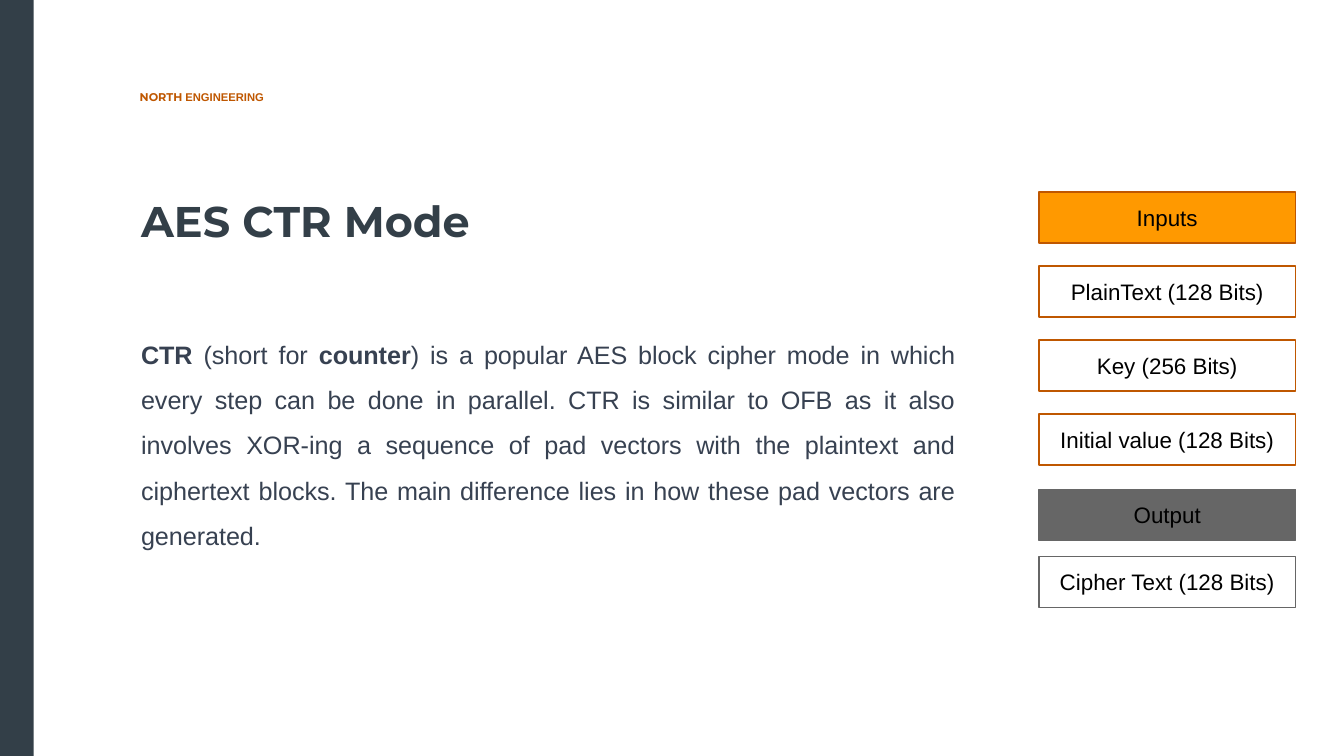
from dataclasses import dataclass

from pptx import Presentation
from pptx.dml.color import RGBColor
from pptx.enum import shapes, text
from pptx.util import Inches, Pt

SLATE = RGBColor(0x33, 0x3F, 0x48)
INK = RGBColor(0x37, 0x41, 0x51)
BURNT = RGBColor(0xBF, 0x57, 0x00)
ORANGE = RGBColor(0xFF, 0x99, 0x00)
GRAY = RGBColor(0x66, 0x66, 0x66)
WHITE = RGBColor(0xFF, 0xFF, 0xFF)
BLACK = RGBColor(0x00, 0x00, 0x00)

SLIDE_WIDTH = 10
SLIDE_HEIGHT = SLIDE_WIDTH * 9 / 16
BOX_LEFT, BOX_WIDTH, BOX_HEIGHT = 7.73, 1.91, 0.38
INPUT_TOP, INPUT_PITCH = 1.43, 0.55


@dataclass
class Box:
    label: str
    top: float
    fill: RGBColor
    line: RGBColor


@dataclass
class Span:
    text: str
    size: float
    color: RGBColor
    bold: bool = False
    font: str = "Arial"


def set_frame(tf, x: float, y: float, anchor) -> None:
    tf.word_wrap = True
    tf.auto_size = text.MSO_AUTO_SIZE.NONE
    tf.vertical_anchor = anchor
    tf.margin_left = tf.margin_right = Inches(x)
    tf.margin_top = tf.margin_bottom = Inches(y)


def add_spans(p, spans: list[Span]) -> None:
    for span in spans:
        r = p.add_run()
        r.text = span.text
        r.font.name = span.font
        r.font.size = Pt(span.size)
        r.font.bold = span.bold
        r.font.color.rgb = span.color


def fill_text(sp, spans: list[Span], align=text.PP_ALIGN.LEFT):
    set_frame(sp.text_frame, 0.04, 0.02, text.MSO_ANCHOR.TOP)
    p = sp.text_frame.paragraphs[0]
    p.alignment = align
    add_spans(p, spans)
    return p


def add_text(s, left: float, top: float, width: float, height: float,
             spans: list[Span], align=text.PP_ALIGN.LEFT):
    sp = s.shapes.add_textbox(Inches(left), Inches(top), Inches(width), Inches(height))
    return fill_text(sp, spans, align)


def add_rect(s, left: float, top: float, width: float, height: float, fill: RGBColor):
    sp = s.shapes.add_shape(shapes.MSO_SHAPE.RECTANGLE, Inches(left), Inches(top),
                            Inches(width), Inches(height))
    sp.shadow.inherit = False
    sp.fill.solid()
    sp.fill.fore_color.rgb = fill
    sp.line.fill.background()
    return sp


def add_box(s, box: Box) -> None:
    sp = add_rect(s, BOX_LEFT, box.top, BOX_WIDTH, BOX_HEIGHT, box.fill)
    sp.line.color.rgb = box.line
    sp.line.width = Pt(0.75)
    set_frame(sp.text_frame, 0.1, 0.1, text.MSO_ANCHOR.MIDDLE)
    p = sp.text_frame.paragraphs[0]
    p.alignment = text.PP_ALIGN.CENTER
    add_spans(p, [Span(box.label, 12, BLACK)])


def main() -> None:
    prs = Presentation()
    prs.slide_width, prs.slide_height = Inches(SLIDE_WIDTH), Inches(SLIDE_HEIGHT)
    s = prs.slides.add_slide(prs.slide_layouts[5])

    title = s.shapes.title
    title.left, title.top = Inches(1.01), Inches(1.43)
    title.width, title.height = Inches(6.1), Inches(0.43)
    fill_text(title, [Span("AES CTR Mode", 23, SLATE, True, "Montserrat")])

    add_text(s, 1, 0.65, 4.54, 0.14, [
        Span("NORTH", 6, BURNT, True, "Montserrat"),
        Span(" ENGINEERING", 6, BURNT, True),
    ])
    body = add_text(s, 1.01, 2.39, 6.14, 1.63, [
        Span("CTR", 13.5, INK, True),
        Span(" (short for ", 13.5, INK),
        Span("counter", 13.5, INK, True),
        Span(") is a popular AES block cipher mode in which every step can be done "
             "in parallel. CTR is similar to OFB as it also involves XOR-ing a "
             "sequence of pad vectors with the plaintext and ciphertext blocks. "
             "The main difference lies in how these pad vectors are generated.",
             13.5, INK),
    ], text.PP_ALIGN.JUSTIFY)
    body.line_spacing = 1.5

    add_rect(s, 0, 0, 0.25, SLIDE_HEIGHT, SLATE)

    inputs = ["Inputs", "PlainText (128 Bits)", "Key (256 Bits)", "Initial value (128 Bits)"]
    boxes = [Box(label, INPUT_TOP + i * INPUT_PITCH, WHITE if i else ORANGE, BURNT)
             for i, label in enumerate(inputs)]
    boxes += [Box("Output", 3.64, GRAY, GRAY),
              Box("Cipher Text (128 Bits)", 4.14, WHITE, GRAY)]
    for box in boxes:
        add_box(s, box)

    prs.save("out.pptx")


if __name__ == "__main__":
    main()
